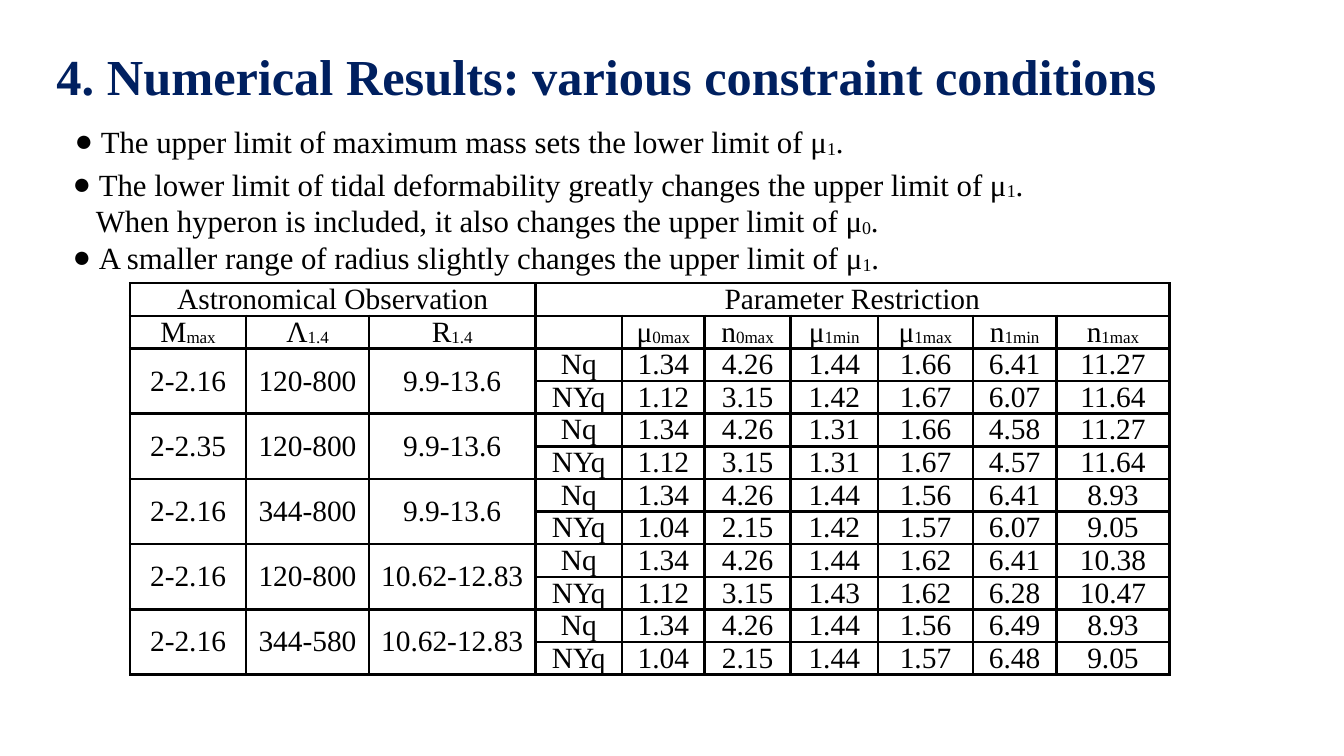
from lxml.etree import SubElement
from pptx import Presentation
from pptx.dml.color import RGBColor
from pptx.enum.text import MSO_ANCHOR, MSO_AUTO_SIZE, PP_ALIGN
from pptx.oxml import parse_xml
from pptx.oxml.ns import nsdecls, qn
from pptx.util import Pt

PX = 9144  # 100 px to the inch
FONT = "Times New Roman"
BLACK = RGBColor(0x00, 0x00, 0x00)
NAVY = RGBColor(0x00, 0x20, 0x60)

COLUMN_WIDTHS = [115, 122, 165, 86, 82, 85, 87, 94, 83, 112]
ROW_HEIGHT = 29
# Parts between bars alternate between normal text and subscript.
GROUPS = ["Astronomical Observation", "", "", "Parameter Restriction"] + [""] * 6
HEADINGS = ["M|max", "Λ|1.4", "R|1.4", "", "μ|0max", "n|0max",
            "μ|1min", "μ|1max", "n|1min", "n|1max"]
CASES = [
    ("2-2.16 120-800 9.9-13.6",
     "1.34 4.26 1.44 1.66 6.41 11.27", "1.12 3.15 1.42 1.67 6.07 11.64"),
    ("2-2.35 120-800 9.9-13.6",
     "1.34 4.26 1.31 1.66 4.58 11.27", "1.12 3.15 1.31 1.67 4.57 11.64"),
    ("2-2.16 344-800 9.9-13.6",
     "1.34 4.26 1.44 1.56 6.41 8.93", "1.04 2.15 1.42 1.57 6.07 9.05"),
    ("2-2.16 120-800 10.62-12.83",
     "1.34 4.26 1.44 1.62 6.41 10.38", "1.12 3.15 1.43 1.62 6.28 10.47"),
    ("2-2.16 344-580 10.62-12.83",
     "1.34 4.26 1.44 1.56 6.49 8.93", "1.04 2.15 1.44 1.57 6.48 9.05"),
]
NOTES = [
    (69, 117, 776, 45,
     [("●", "The upper limit of maximum mass sets the lower limit of μ|1|.")]),
    (67, 159, 965, 81,
     [("●", "The lower limit of tidal deformability greatly changes the upper limit of μ|1|."),
      ("", "When hyperon is included, it also changes the upper limit of μ|0|.")]),
    (67, 232, 812, 45,
     [("●", "A smaller range of radius slightly changes the upper limit of μ|1|.")]),
]


class SlideBuilder:
    def __init__(self, prs):
        self.s = prs.slides.add_slide(prs.slide_layouts[5])

    def format_run(self, r, size, color=BLACK, bold=False):
        r.font.name = FONT
        r.font.size = Pt(size)
        r.font.color.rgb = color
        r.font.bold = bold

    def add_runs(self, p, text, size):
        """Fill a paragraph, lowering every second part of the text."""
        for i, part in enumerate(text.split("|") if text else []):
            r = p.add_run()
            r.text = part
            self.format_run(r, size)
            if i % 2:
                r._r.get_or_add_rPr().set("baseline", "-6000")

    def frame(self, tf, anchor):
        tf.word_wrap = True
        tf.vertical_anchor = anchor
        tf.margin_left = tf.margin_right = 5 * PX
        tf.margin_top = tf.margin_bottom = 5 * PX

    def title(self, x, y, w, h, text):
        sp = self.s.shapes.title
        sp.left, sp.top, sp.width, sp.height = x * PX, y * PX, w * PX, h * PX
        tf = sp.text_frame
        tf.text = text
        self.frame(tf, MSO_ANCHOR.MIDDLE)
        tf.auto_size = MSO_AUTO_SIZE.NONE
        p = tf.paragraphs[0]
        p.alignment = PP_ALIGN.LEFT
        p.line_spacing = 0.9
        self.format_run(p.runs[0], 36, NAVY, True)

    def note(self, x, y, w, h, lines):
        sp = self.s.shapes.add_textbox(x * PX, y * PX, w * PX, h * PX)
        tf = sp.text_frame
        self.frame(tf, MSO_ANCHOR.TOP)
        tf.auto_size = MSO_AUTO_SIZE.SHAPE_TO_FIT_TEXT
        for i, (bullet, text) in enumerate(lines):
            p = tf.add_paragraph() if i else tf.paragraphs[0]
            pPr = p._p.get_or_add_pPr()
            if bullet:
                pPr.set("marL", str(26 * PX))
                pPr.set("indent", str(-26 * PX))
                SubElement(pPr, qn("a:buFont"), typeface=FONT)
                SubElement(pPr, qn("a:buChar"), char=bullet)
            else:
                pPr.set("marL", str(23 * PX))
            self.add_runs(p, text, 22)

    def border(self, cell):
        tcPr = cell._tc.get_or_add_tcPr()
        for i, side in enumerate("LRTB"):
            tcPr.insert(i, parse_xml(
                f'<a:ln{side} {nsdecls("a")} w="{Pt(2)}"><a:solidFill>'
                f'<a:srgbClr val="{BLACK}"/></a:solidFill></a:ln{side}>'))

    def table(self, x, y, widths, row_height, rows, spans):
        """Draw rows of text; spans lists (row, column, last row, last column)."""
        table = self.s.shapes.add_table(
            len(rows), len(widths), x * PX, y * PX,
            sum(widths) * PX, len(rows) * row_height * PX).table
        table.first_row = table.horz_banding = False
        for column, width in zip(table.columns, widths):
            column.width = width * PX
        for i, row in enumerate(rows):
            table.rows[i].height = row_height * PX
            for j, text in enumerate(row):
                cell = table.cell(i, j)
                cell.margin_left = cell.margin_right = 7 * PX
                cell.margin_top = cell.margin_bottom = 0
                cell.vertical_anchor = MSO_ANCHOR.MIDDLE
                cell.fill.background()
                self.border(cell)
                p = cell.text_frame.paragraphs[0]
                p.alignment = PP_ALIGN.CENTER
                self.add_runs(p, text, 21)
        for top, left, bottom, right in spans:
            table.cell(top, left).merge(table.cell(bottom, right))


def main():
    prs = Presentation()
    prs.slide_width, prs.slide_height = 1333 * PX, 750 * PX
    slide = SlideBuilder(prs)

    rows = [GROUPS, HEADINGS]
    spans = [(0, 0, 0, 2), (0, 3, 0, 9)]
    for observed, nq, nyq in CASES:
        top = len(rows)
        spans += [(top, j, top + 1, j) for j in range(3)]
        rows.append(observed.split() + ["Nq"] + nq.split())
        rows.append([""] * 3 + ["NYq"] + nyq.split())
    slide.table(129, 281, COLUMN_WIDTHS, ROW_HEIGHT, rows, spans)

    slide.title(51, 39, 1147, 79, "4. Numerical Results: various constraint conditions")
    for x, y, w, h, lines in NOTES:
        slide.note(x, y, w, h, lines)
    prs.save("out.pptx")


if __name__ == "__main__":
    main()
